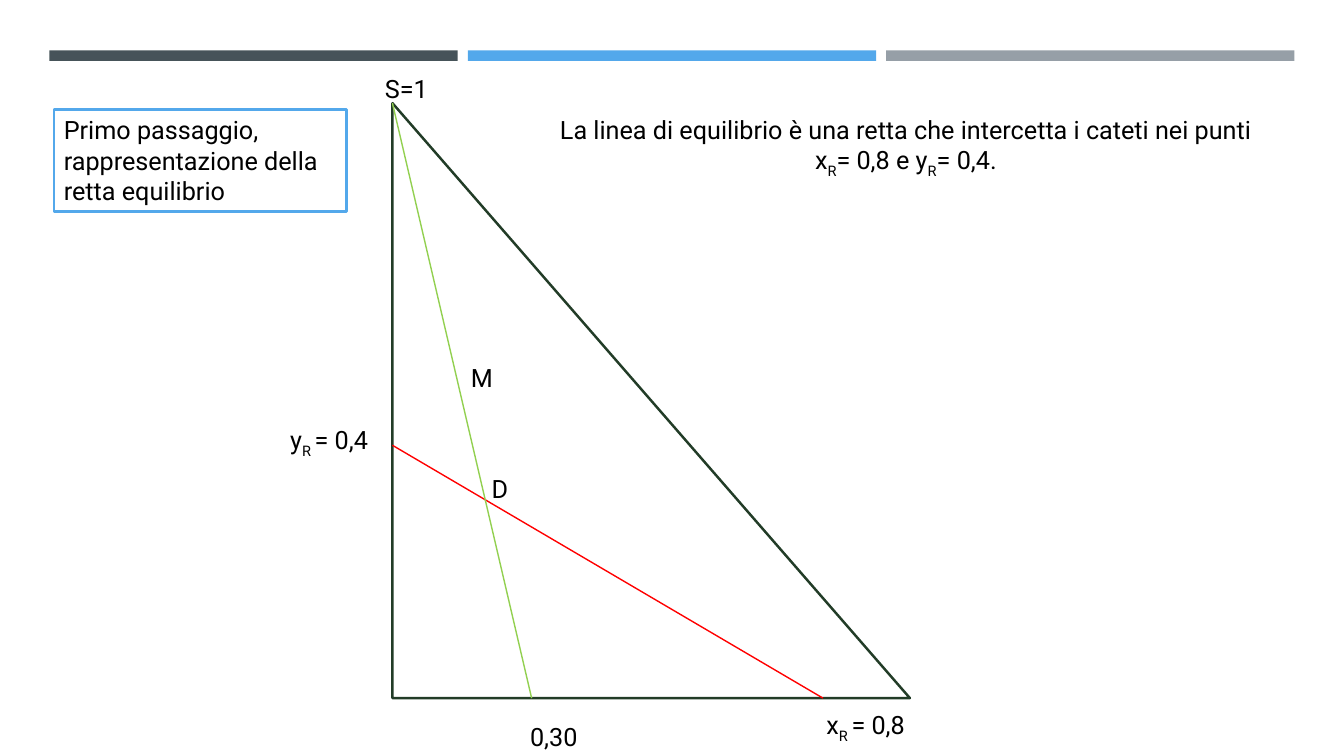
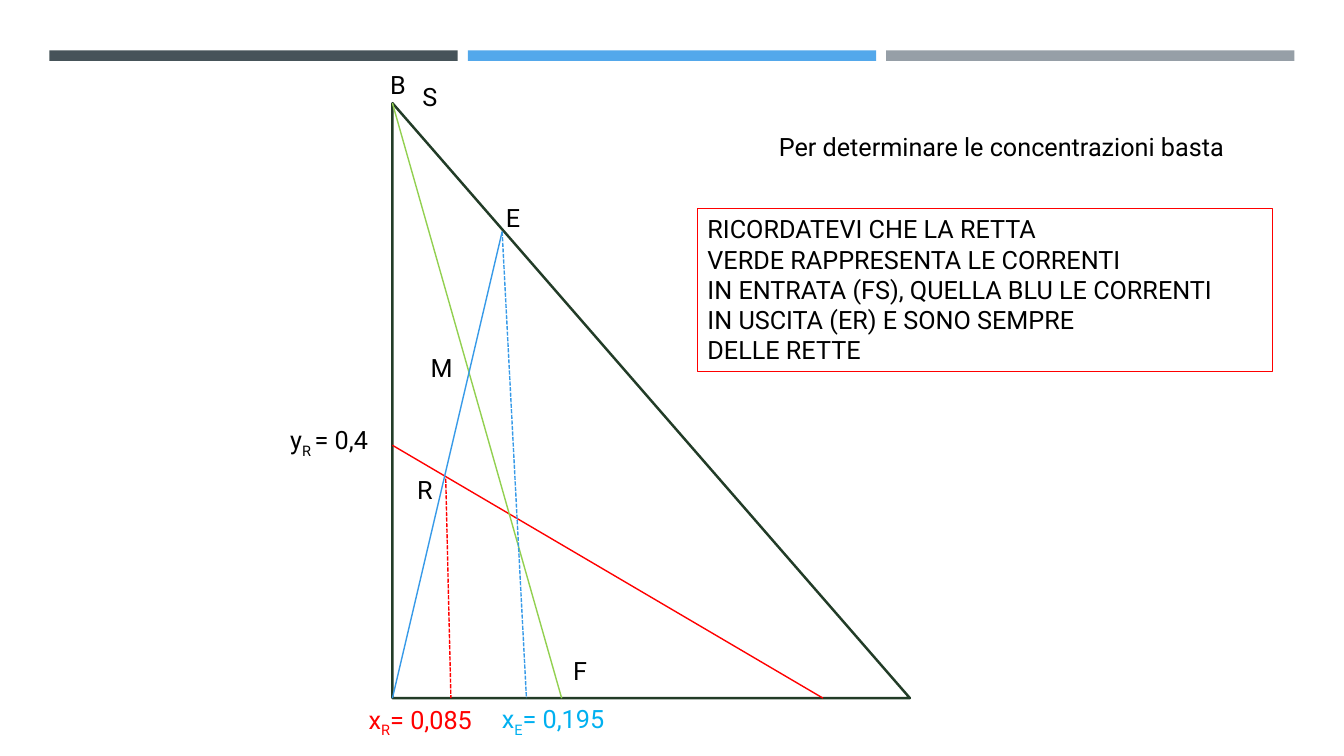
import pptx
import pptx.dml.color
import pptx.enum.dml
import pptx.enum.shapes
import pptx.enum.text
import pptx.oxml.ns
import pptx.oxml.xmlchemy
import pptx.util

COLORS = {
    "slate": "465359", "sky": "53A8EB", "gray": "969FA7", "forest": "223C27",
    "red": "FF0000", "green": "92D050", "blue": "379AE8", "cyan": "00B0F0",
    "black": "000000",
}
FONT = "Roboto"
TEXT_SIZE = pptx.util.Pt(18)

SLIDE_WIDTH = pptx.util.Inches(13.33)
SLIDE_HEIGHT = pptx.util.Inches(7.5)
LABEL_HEIGHT = 5.2

# Triangle frame, in percent of the slide
TRIANGLE_LEFT, TRIANGLE_TOP = 29.2, 13.65
TRIANGLE_WIDTH, TRIANGLE_HEIGHT = 38.5, 78.7

# Points in percent of the two legs, measured from the right angle
ORIGIN = (0, 0)
SOLVENT = (0, 100)
EQUILIBRIUM_Y = (0, 42.5)
EQUILIBRIUM_X = (83.2, 0)
EXTRACT = (21.2, 78.4)
RAFFINATE = (10.3, 36.9)


def across(percent):
    return round(SLIDE_WIDTH * percent / 100)


def down(percent):
    return round(SLIDE_HEIGHT * percent / 100)


def frame(left, top, width, height):
    """Turn percentages of the slide into a position and size."""
    return across(left), down(top), across(width), down(height)


def on_triangle(point):
    x, y = point
    return (across(TRIANGLE_LEFT + TRIANGLE_WIDTH * x / 100),
            down(TRIANGLE_TOP + TRIANGLE_HEIGHT * (100 - y) / 100))


def rgb(color):
    return pptx.dml.color.RGBColor.from_string(COLORS[color])


def set_line(line, color, width):
    line.color.rgb = rgb(color)
    line.width = pptx.util.Pt(width)


def write(box, lines, color="black", align="LEFT", wrap=True):
    """Fill a box with paragraphs; text between bars is subscript."""
    text_frame = box.text_frame
    text_frame.word_wrap = wrap
    text_frame.auto_size = pptx.enum.text.MSO_AUTO_SIZE.NONE
    text_frame.vertical_anchor = pptx.enum.text.MSO_ANCHOR.TOP
    for number, line in enumerate(lines):
        paragraph = text_frame.add_paragraph() if number else text_frame.paragraphs[0]
        paragraph.alignment = getattr(pptx.enum.text.PP_ALIGN, align)
        for part, words in enumerate(line.split("|")):
            run = paragraph.add_run()
            run.text = words
            run.font.name = FONT
            run.font.size = TEXT_SIZE
            run.font.color.rgb = rgb(color)
            if part % 2:
                run.font._element.set("baseline", "-25000")


def add_heading(slide, place, lines):
    heading = slide.shapes.title
    heading.left, heading.top, heading.width, heading.height = frame(*place)
    write(heading, lines)
    return heading


def add_text(slide, place, lines, **style):
    box = slide.shapes.add_textbox(*frame(*place))
    write(box, lines, **style)
    return box


def add_labels(slide, labels):
    for words, left, top, width, color in labels:
        add_text(slide, (left, top, width, LABEL_HEIGHT), [words], color=color, wrap=False)


def add_segment(slide, start, end, color, dashed=False):
    segment = slide.shapes.add_connector(
        pptx.enum.shapes.MSO_CONNECTOR.STRAIGHT, *on_triangle(start), *on_triangle(end))
    set_line(segment.line, color, 1)
    if dashed:
        segment.line.dash_style = pptx.enum.dml.MSO_LINE.SQUARE_DOT
    properties = segment.element.find(pptx.oxml.ns.qn("p:spPr"))
    properties.append(pptx.oxml.xmlchemy.OxmlElement("a:effectLst"))


def add_bands(slide):
    """Draw the three top bands and move them to the slide's layout."""
    layout_tree = slide.slide_layout.shapes.element
    for column, color in enumerate(("slate", "sky", "gray")):
        band = slide.shapes.add_shape(
            pptx.enum.shapes.MSO_SHAPE.RECTANGLE,
            *frame(3.68 + 31.13 * column, 6.67, 30.38, 1.4))
        band.shadow.inherit = False
        band.fill.solid()
        band.fill.fore_color.rgb = rgb(color)
        band.line.fill.background()
        used = [int(value) for value in layout_tree.xpath(".//p:cNvPr/@id")]
        band.element.xpath("./p:nvSpPr/p:cNvPr")[0].set("id", str(max(used) + 1))
        layout_tree.append(band.element)


def add_diagram(slide):
    triangle = slide.shapes.add_shape(
        pptx.enum.shapes.MSO_SHAPE.RIGHT_TRIANGLE,
        *frame(TRIANGLE_LEFT, TRIANGLE_TOP, TRIANGLE_WIDTH, TRIANGLE_HEIGHT))
    triangle.shadow.inherit = False
    triangle.fill.background()
    set_line(triangle.line, "forest", 1.75)
    add_segment(slide, EQUILIBRIUM_Y, EQUILIBRIUM_X, "red")
    add_labels(slide, [("y|R |= 0,4", 20.85, 55.5, 8, "black")])


def build_equilibrium(slide):
    add_diagram(slide)
    step = add_heading(slide, (4, 14.5, 21.8, 13.5), [
        "Primo passaggio,", "rappresentazione della", "retta equilibrio"])
    set_line(step.line, "sky", 1.75)
    add_text(slide, (39.4, 14.5, 56, 9.5), [
        "La linea di equilibrio è una retta che intercetta i cateti nei punti",
        "x|R|= 0,8 e y|R|= 0,4."], align="CENTER")
    add_segment(slide, (26.9, 0), SOLVENT, "green")
    add_labels(slide, [
        ("x|R |= 0,8", 60.75, 93.2, 7.9, "black"),
        ("0,30", 38.7, 94.8, 5.2, "black"),
        ("S=1", 27.9, 9.1, 5, "black"),
        ("D", 35.85, 61.9, 2.9, "black"),
        ("M", 34.3, 47.3, 3.3, "black"),
    ])


def build_concentrations(slide):
    add_diagram(slide)
    add_heading(slide, (57.2, 16.7, 37.5, 5.3), ["Per determinare le concentrazioni basta"])
    add_segment(slide, SOLVENT, (32.7, 0), "green")
    add_segment(slide, ORIGIN, EXTRACT, "blue")
    add_segment(slide, EXTRACT, (25.9, 0), "blue", dashed=True)
    add_segment(slide, RAFFINATE, (11.3, 0), "red", dashed=True)
    add_labels(slide, [
        ("B", 28.3, 8.5, 2.8, "black"),
        ("S", 30.7, 10.1, 2.8, "black"),
        ("E", 36.9, 26.1, 2.7, "black"),
        ("M", 31.3, 46, 3.3, "black"),
        ("R", 30.3, 62.1, 2.7, "black"),
        ("F", 41.9, 86, 2.6, "black"),
        ("x|R|= 0,085", 26.7, 92.5, 9.8, "red"),
        ("x|E|= 0,195", 36.6, 92.4, 9.7, "cyan"),
    ])
    reminder = add_text(slide, (51.9, 27.6, 42.8, 21.6), [
        "RICORDATEVI CHE LA RETTA",
        "VERDE RAPPRESENTA LE CORRENTI",
        "IN ENTRATA (FS), QUELLA BLU LE CORRENTI",
        "IN USCITA (ER) E SONO SEMPRE",
        "DELLE RETTE"])
    set_line(reminder.line, "red", 0.75)


def main():
    deck = pptx.Presentation()
    deck.slide_width, deck.slide_height = SLIDE_WIDTH, SLIDE_HEIGHT
    title_only = deck.slide_layouts[5]
    equilibrium = deck.slides.add_slide(title_only)
    add_bands(equilibrium)
    build_equilibrium(equilibrium)
    build_concentrations(deck.slides.add_slide(title_only))
    deck.save("out.pptx")


if __name__ == "__main__":
    main()
